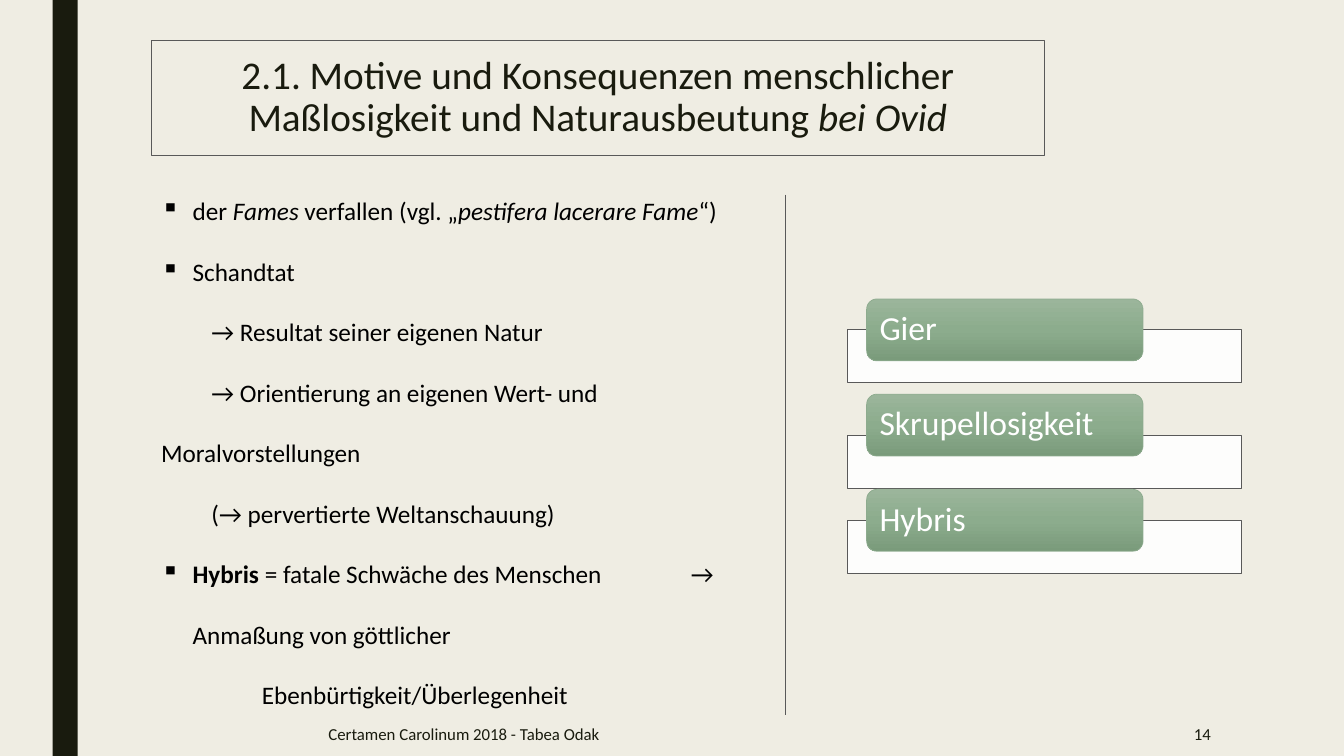
import copy
import dataclasses

import lxml.etree
import pptx
import pptx.dml.color
import pptx.enum.shapes
import pptx.enum.text
import pptx.oxml.ns
import pptx.util

Pt = pptx.util.Pt
qn = pptx.oxml.ns.qn
ALIGN = pptx.enum.text.PP_ALIGN
ANCHOR = pptx.enum.text.MSO_ANCHOR
SHAPE = pptx.enum.shapes.MSO_SHAPE


@dataclasses.dataclass(frozen=True)
class Theme:
    font: str = "Calibri"
    background: str = "EFEDE3"
    dark: str = "191B0E"
    body: str = "000000"
    white: str = "FFFFFF"
    outline: str = "595959"
    pill_line: str = "8DAB8E"
    pill_fill: tuple = ("9BB59B", "8CAC8D", "7A9B7B")
    title_size: int = 28
    pill_size: int = 24
    body_size: int = 18
    footer_size: int = 12


THEME = Theme()

# Each bullet text is a list of (words, style) spans
BULLET, INDENT = "bullet", "indent"
ARGUMENTS = [
    (BULLET, 0, [("der ", ""), ("Fames", "i"), (" verfallen (vgl. „", ""),
                 ("pestifera lacerare Fame", "i"), ("“)", "")]),
    (BULLET, 0, [("Schandtat", "")]),
    (INDENT, 36, [("→ Resultat seiner eigenen Natur", "")]),
    (INDENT, 36, [("→ Orientierung an eigenen Wert- und Moralvorstellungen", "")]),
    (INDENT, 36, [("(→ pervertierte Weltanschauung)", "")]),
    (BULLET, 0, [("Hybris", "b"),
                 (" = fatale Schwäche des Menschen\t→ Anmaßung von göttlicher", "")]),
    (INDENT, 72, [("Ebenbürtigkeit/Überlegenheit", "")]),
]
# Label and top of the bar behind it
MOTIVES = [("Gier", 235.5), ("Skrupellosigkeit", 311), ("Hybris", 371.5)]


def rgb(colour):
    return pptx.dml.color.RGBColor.from_string(colour)


def add_spans(para, spans, size, colour):
    for words, style in spans:
        span = para.add_run()
        span.text = words
        span.font.name = THEME.font
        span.font.size = Pt(size)
        span.font.bold = style == "b"
        span.font.italic = style == "i"
        span.font.color.rgb = rgb(colour)


def place(shape, left, top, width, height):
    shape.left, shape.top = Pt(left), Pt(top)
    shape.width, shape.height = Pt(width), Pt(height)


def set_line(shape, colour, width):
    shape.line.color.rgb = rgb(colour)
    shape.line.width = Pt(width)


def add_block(page, kind, left, top, width, height):
    block = page.shapes.add_shape(kind, Pt(left), Pt(top), Pt(width), Pt(height))
    block.shadow.inherit = False
    return block


def add_box(page, left, top, width, height):
    box = page.shapes.add_textbox(Pt(left), Pt(top), Pt(width), Pt(height))
    box.text_frame.word_wrap = True
    return box.text_frame


def add_title(page, spans):
    title = page.shapes.title
    place(title, 108, 28.8, 638, 82)
    set_line(title, THEME.outline, 0.75)
    frame = title.text_frame
    frame.auto_size = pptx.enum.text.MSO_AUTO_SIZE.NONE
    frame.vertical_anchor = ANCHOR.MIDDLE
    para = frame.paragraphs[0]
    para.alignment = ALIGN.CENTER
    para.line_spacing = 0.89
    add_spans(para, spans, THEME.title_size, THEME.dark)


def set_bullet(para):
    properties = para._p.get_or_add_pPr()
    properties.set("marL", str(Pt(22.5)))
    properties.set("indent", str(Pt(-22.5)))
    lxml.etree.SubElement(properties, qn("a:buChar")).set("char", "▪")
    tabs = lxml.etree.SubElement(properties, qn("a:tabLst"))
    tab = lxml.etree.SubElement(tabs, qn("a:tab"))
    tab.set("pos", str(Pt(378.5)))
    tab.set("algn", "l")


def add_arguments(page):
    frame = add_box(page, 108, 114.5, 415.5, 394)
    for number, (kind, indent, spans) in enumerate(ARGUMENTS):
        para = frame.add_paragraph() if number else frame.paragraphs[0]
        para.line_spacing = 2.0
        if kind == BULLET:
            set_bullet(para)
        else:
            para._p.get_or_add_pPr().set("indent", str(Pt(indent)))
        add_spans(para, spans, THEME.body_size, THEME.body)


def set_gradient(shape, colours):
    shape.fill.gradient()
    shape.fill.gradient_angle = 270
    stops = shape._element.spPr.find(qn("a:gradFill")).find(qn("a:gsLst"))
    stops.insert(1, copy.deepcopy(stops[0]))
    for number, (stop, colour) in enumerate(zip(shape.fill.gradient_stops, colours)):
        stop.position = number / (len(colours) - 1)
        stop.color.rgb = rgb(colour)


def add_motive(page, label, bar_top, pill_top):
    # Translucent bar
    bar = add_block(page, SHAPE.RECTANGLE, 605, bar_top, 282, 37.8)
    bar.fill.solid()
    bar.fill.fore_color.rgb = rgb(THEME.white)
    colour = bar._element.spPr.find(qn("a:solidFill"))[0]
    lxml.etree.SubElement(colour, qn("a:alpha")).set("val", "90000")
    set_line(bar, THEME.outline, 0.5)
    # Labelled pill in front
    pill = add_block(page, SHAPE.ROUNDED_RECTANGLE, 619, pill_top, 197.5, 44.25)
    set_gradient(pill, THEME.pill_fill)
    set_line(pill, THEME.pill_line, 0.5)
    frame = pill.text_frame
    frame.margin_left = frame.margin_right = Pt(7.2)
    frame.margin_top = frame.margin_bottom = 0
    frame.vertical_anchor = ANCHOR.MIDDLE
    para = frame.paragraphs[0]
    para.alignment = ALIGN.LEFT
    para.line_spacing = 0.9
    add_spans(para, [(label, "")], THEME.pill_size, THEME.white)


def add_footer(page, words, left, width, alignment):
    frame = add_box(page, left, 508.5, width, 31.5)
    frame.vertical_anchor = ANCHOR.MIDDLE
    frame.paragraphs[0].alignment = alignment
    add_spans(frame.paragraphs[0], [(words, "")], THEME.footer_size, THEME.dark)


def add_divider(page):
    divider = page.shapes.add_connector(
        pptx.enum.shapes.MSO_CONNECTOR.STRAIGHT, Pt(561), Pt(139), Pt(561), Pt(510.5))
    set_line(divider, THEME.outline, 0.5)
    lxml.etree.SubElement(divider._element.spPr, qn("a:effectLst"))


def main():
    deck = pptx.Presentation()
    deck.slide_width, deck.slide_height = Pt(960), Pt(540)
    page = deck.slides.add_slide(deck.slide_layouts.get_by_name("Title Only"))
    page.background.fill.solid()
    page.background.fill.fore_color.rgb = rgb(THEME.background)

    # Side stripe
    stripe = add_block(page, SHAPE.RECTANGLE, 37.5, 0, 18, 540)
    stripe.fill.solid()
    stripe.fill.fore_color.rgb = rgb(THEME.dark)
    stripe.line.fill.background()

    # Title and arguments
    add_title(page, [("2.1. Motive und Konsequenzen menschlicher Maßlosigkeit "
                      "und Naturausbeutung ", ""), ("bei Ovid", "i")])
    add_arguments(page)
    add_divider(page)

    # Motives, evenly stacked
    for number, (label, bar_top) in enumerate(MOTIVES):
        add_motive(page, label, bar_top, 213.5 + 68 * number)

    # Footer
    add_footer(page, "Certamen Carolinum 2018 - Tabea Odak", 227.5, 494.5, ALIGN.LEFT)
    add_footer(page, "14", 746, 126, ALIGN.RIGHT)
    deck.save("out.pptx")


if __name__ == "__main__":
    main()
